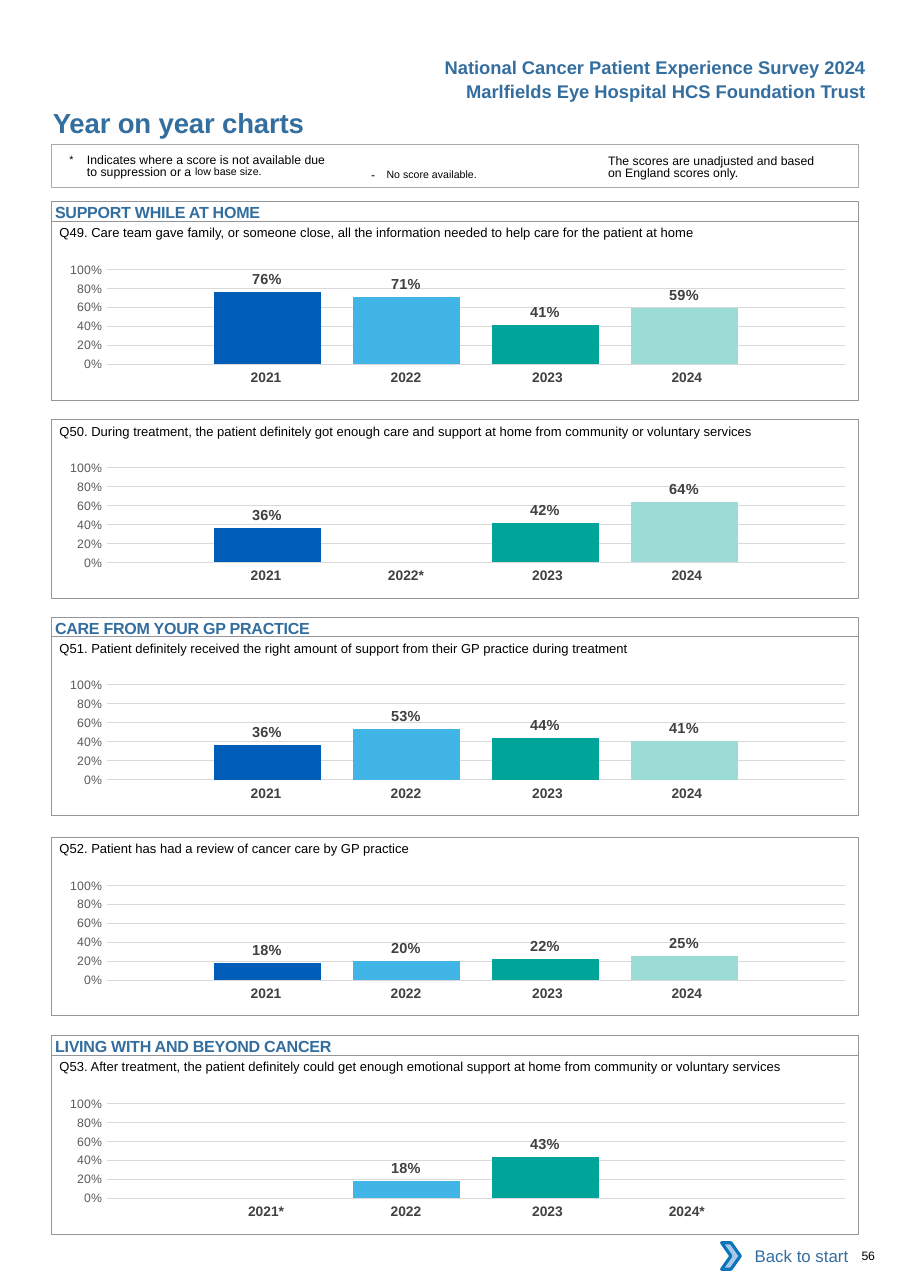
from pptx import Presentation
from pptx.chart.data import CategoryChartData
from pptx.dml.color import RGBColor
from pptx.enum.chart import XL_CHART_TYPE, XL_LABEL_POSITION, XL_TICK_MARK
from pptx.enum.shapes import MSO_SHAPE
from pptx.enum.text import MSO_ANCHOR, PP_ALIGN
from pptx.oxml import parse_xml
from pptx.oxml.ns import nsdecls
from pptx.util import Inches, Pt

COLUMN = XL_CHART_TYPE.COLUMN_CLUSTERED
OUTSIDE_END = XL_LABEL_POSITION.OUTSIDE_END
NO_TICK = XL_TICK_MARK.NONE
RECT, CHEVRON = MSO_SHAPE.RECTANGLE, MSO_SHAPE.CHEVRON
TOP, MIDDLE = MSO_ANCHOR.TOP, MSO_ANCHOR.MIDDLE
LEFT, CENTER, RIGHT = PP_ALIGN.LEFT, PP_ALIGN.CENTER, PP_ALIGN.RIGHT

BLACK = RGBColor(0x00, 0x00, 0x00)
WHITE = RGBColor(0xFF, 0xFF, 0xFF)
HEADING = RGBColor(0x33, 0x6E, 0x9F)
BORDER = RGBColor(0x93, 0x95, 0x98)
SOFT_BORDER = RGBColor(0xA9, 0xAA, 0xAD)
YEAR = RGBColor(0x41, 0x40, 0x42)
LABEL = RGBColor(0x40, 0x40, 0x40)
AXIS = RGBColor(0x59, 0x59, 0x59)
GRID = RGBColor(0xD9, 0xD9, 0xD9)
ARROW_FILL = RGBColor(0xA8, 0xC7, 0xE9)
ARROW_LINE = RGBColor(0x0A, 0x74, 0xBB)
BARS = (RGBColor(0x00, 0x5E, 0xB8), RGBColor(0x41, 0xB6, 0xE6),
        RGBColor(0x00, 0xA4, 0x99), RGBColor(0x9C, 0xDC, 0xD7))

FONT = "Arial"
PLAIN_TABLE = "{2D5ABB26-0587-4C30-8999-92F81FD0307C}"
BOX_X, BOX_W, BOX_H = 0.47, 7.32, 1.62
HEADING_H = 0.18
YEAR_WIDTHS = (1.27, 1.27, 1.34, 1.27)
YEAR_RIGHT_MARGINS = (0, 0, 0.04, 0.12)
PLOT_AREA = {"x": 0.079, "y": 0.145, "w": 0.915, "h": 0.666}

# Box top, section heading, question, share for each year
QUESTIONS = (
    (2.01, "SUPPORT WHILE AT HOME",
     "Q49. Care team gave family, or someone close, all the information needed "
     "to help care for the patient at home", (0.76, 0.71, 0.41, 0.59)),
    (3.81, None,
     "Q50. During treatment, the patient definitely got enough care and support "
     "at home from community or voluntary services", (0.36, None, 0.42, 0.64)),
    (5.78, "CARE FROM YOUR GP PRACTICE",
     "Q51. Patient definitely received the right amount of support from their "
     "GP practice during treatment", (0.36, 0.53, 0.44, 0.41)),
    (7.6, None,
     "Q52. Patient has had a review of cancer care by GP practice",
     (0.18, 0.2, 0.22, 0.25)),
    (9.58, "LIVING WITH AND BEYOND CANCER",
     "Q53. After treatment, the patient definitely could get enough emotional "
     "support at home from community or voluntary services",
     (None, 0.18, 0.43, None)),
)


def set_font(font, size, color, bold=False):
    font.name, font.size, font.bold = FONT, Pt(size), bold
    font.color.rgb = color


def add_run(p, text, size=8, color=BLACK, bold=False, spacing=0, baseline=0):
    r = p.add_run()
    r.text = text
    set_font(r.font, size, color, bold)
    rPr = r._r.get_or_add_rPr()
    if spacing:
        rPr.set("spc", str(round(spacing * 100)))
    if baseline:
        rPr.set("baseline", str(baseline * 1000))


class Page:
    def __init__(self, prs):
        self.s = prs.slides.add_slide(prs.slide_layouts.get_by_name("Blank"))

    def frame(self, tf, margins, anchor=TOP, align=LEFT):
        tf.word_wrap = True
        tf.vertical_anchor = anchor
        (tf.margin_left, tf.margin_top,
         tf.margin_right, tf.margin_bottom) = map(Inches, margins)
        p = tf.paragraphs[0]
        p.alignment = align
        return p

    def text(self, x, y, w, h, text, margins=(0, 0, 0, 0), align=LEFT, **fmt):
        box = self.s.shapes.add_textbox(*map(Inches, (x, y, w, h)))
        p = self.frame(box.text_frame, margins, align=align)
        add_run(p, text, **fmt)
        return p

    def shape(self, kind, x, y, w, h, fill=None, line=None, width=0.5):
        sp = self.s.shapes.add_shape(kind, *map(Inches, (x, y, w, h)))
        sp.shadow.inherit = False
        for part, color in ((sp.fill, fill), (sp.line.fill, line)):
            if color is None:
                part.background()
            else:
                part.solid()
                part.fore_color.rgb = color
        if line is not None:
            sp.line.width = Pt(width)
        return sp

    def heading(self, y, text):
        sp = self.shape(RECT, BOX_X, y, BOX_W, HEADING_H, line=BORDER)
        p = self.frame(sp.text_frame, (0.03, 0.01, 0, 0))
        add_run(p, text, size=10.5, color=HEADING, bold=True, spacing=-0.15)

    def chart(self, x, y, w, h, values):
        data = CategoryChartData(number_format="0%")
        data.categories = ["1"]
        for n, value in enumerate(values, 1):
            data.add_series(f"Series {n}", [value])
        chart = self.s.shapes.add_chart(
            COLUMN, *map(Inches, (x, y, w, h)), data).chart
        set_font(chart.font, 10, BLACK)
        chart.has_legend = chart.has_title = False
        chart.category_axis.visible = False

        axis = chart.value_axis
        axis.minimum_scale, axis.maximum_scale, axis.major_unit = 0, 1, 0.2
        axis.major_tick_mark = axis.minor_tick_mark = NO_TICK
        axis.format.line.fill.background()
        axis.major_gridlines.format.line.color.rgb = GRID
        axis.major_gridlines.format.line.width = Pt(0.75)
        set_font(axis.tick_labels.font, 8, AXIS)
        axis.tick_labels.number_format = "0%"
        axis.tick_labels.number_format_is_linked = False

        plot = chart.plots[0]
        plot.vary_by_categories = False
        plot.gap_width, plot.overlap = 200, -30
        for series, color in zip(plot.series, BARS):
            series.format.fill.solid()
            series.format.fill.fore_color.rgb = color
            labels = series.data_labels
            labels.show_value = True
            labels.position = OUTSIDE_END
            labels.number_format = "0%"
            labels.number_format_is_linked = False
            set_font(labels.font, 9.5, LABEL, bold=True)

        # Fixed inner plot area
        sizes = "".join(f'<c:{k} val="{v}"/>' for k, v in PLOT_AREA.items())
        plot_area = chart._chartSpace.chart.plotArea
        for old in plot_area.xpath("c:layout"):
            plot_area.remove(old)
        plot_area.insert(0, parse_xml(
            f'<c:layout {nsdecls("c")}><c:manualLayout><c:layoutTarget val="inner"/>'
            f'<c:xMode val="edge"/><c:yMode val="edge"/>{sizes}'
            '</c:manualLayout></c:layout>'))

    def years(self, x, y, values):
        table = self.s.shapes.add_table(
            1, len(values), Inches(x), Inches(y),
            Inches(sum(YEAR_WIDTHS)), Inches(0.27)).table
        table.first_row = table.horz_banding = False
        table._tbl.tblPr.xpath("a:tableStyleId")[0].text = PLAIN_TABLE
        for i, value in enumerate(values):
            table.columns[i].width = Inches(YEAR_WIDTHS[i])
            cell = table.cell(0, i)
            cell.fill.background()
            (cell.margin_left, cell.margin_top, cell.margin_right,
             cell.margin_bottom) = map(Inches, (0.1, 0.05, YEAR_RIGHT_MARGINS[i], 0.05))
            p = cell.text_frame.paragraphs[0]
            p.alignment = CENTER
            star = "*" if value is None else ""
            add_run(p, f"{2021 + i}{star}", size=9, color=YEAR, bold=True)

    def question(self, top, heading, text, values):
        self.chart(0.39, top + 0.25, 7.32, 1.29, values)
        self.years(1.73, top + 1.3, values)
        self.shape(RECT, BOX_X, top, BOX_W, BOX_H, line=BORDER)
        if heading:
            self.heading(top - HEADING_H, heading)
        self.text(0.54, top - 0.06, 7.2, 0.24, text, (0, 0.09, 0, 0), size=8.5)


def main():
    prs = Presentation()
    prs.slide_width, prs.slide_height = Inches(8.26), Inches(11.69)
    page = Page(prs)

    # Page header
    for y, text in ((0.46, "National Cancer Patient Experience Survey 2024"),
                    (0.68, "Marlfields Eye Hospital HCS Foundation Trust")):
        page.text(3.5, y, 4.46, 0.3, text, (0.1, 0.05, 0.1, 0.05), RIGHT,
                  size=12, color=HEADING, bold=True)
    page.text(0.48, 0.96, 4.5, 0.3, "Year on year charts",
              size=18, color=HEADING, bold=True, spacing=-0.1)

    # Key to the symbols
    page.shape(RECT, 0.47, 1.31, 7.32, 0.39, line=SOFT_BORDER, width=0.75)
    p = page.text(0.63, 1.38, 2.4, 0.27, "*\t", (0, 0.03, 0, 0), size=12, baseline=3)
    p.line_spacing = Pt(8.1)
    pPr = p._p.get_or_add_pPr()
    pPr.set("marL", str(Inches(0.16)))
    pPr.set("indent", str(-Inches(0.16)))
    add_run(p, "Indicates where a score is not available due to suppression or a ")
    add_run(p, "low base size.", size=12, baseline=7)
    p = page.text(3.27, 1.41, 1.83, 0.24, "- ", (0.1, 0.05, 0.1, 0.05), spacing=2.6)
    add_run(p, "No score available.", size=12, baseline=3)
    p = page.text(5.52, 1.38, 1.95, 0.27, "The scores are unadjusted and based on "
                  "England scores only.", (0, 0.03, 0, 0))
    p.line_spacing = Pt(8.1)

    # Page footer, behind the last chart box
    sp = page.shape(RECT, 6.62, 11.19, 1.18, 0.42, fill=WHITE)
    p = page.frame(sp.text_frame, (0.1, 0.05, 0.1, 0.05), MIDDLE, RIGHT)
    add_run(p, "Back to start", size=11, color=HEADING)
    page.shape(CHEVRON, 6.55, 11.28, 0.17, 0.24, ARROW_FILL, ARROW_LINE, 2)
    page.text(7.82, 11.33, 0.41, 0.13, "56", spacing=-0.2)

    # Questions
    for question in QUESTIONS:
        page.question(*question)

    prs.save("out.pptx")


if __name__ == "__main__":
    main()
